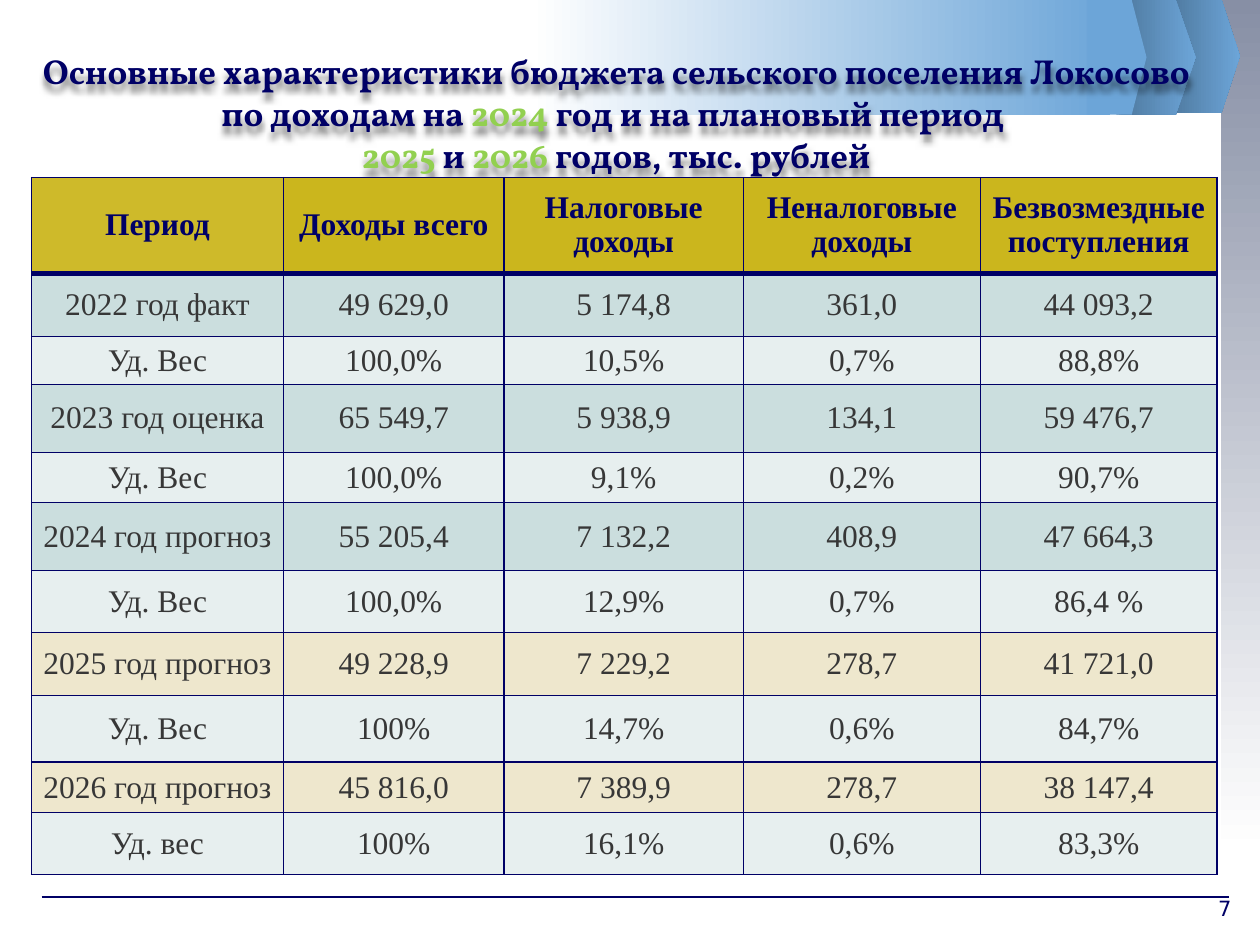
from dataclasses import dataclass

from lxml import etree
from pptx import Presentation
from pptx import util as u
from pptx.dml.color import RGBColor
from pptx.enum import shapes, text
from pptx.oxml import ns

COLUMNS, ROWS = 100, 75


@dataclass(frozen=True)
class Theme:
    navy: str = "000066"
    green: str = "92D050"
    body: str = "373737"
    white: str = "FFFFFF"
    slate: str = "878FA5"
    steel: str = "4D769B"
    sky: str = "6CA5D8"
    gold: str = "CBB61D"
    teal: str = "CBDEDE"
    pale: str = "E7EFEF"
    sand: str = "EEE7CD"
    title_font: str = "Vollkorn"
    table_font: str = "Times New Roman"
    number_font: str = "DejaVu Sans"
    title_size: float = 19.8
    title_leading: float = 24
    table_size: float = 18
    number_size: float = 12


def rgb(code):
    return RGBColor.from_string(code)


def add_xml(parent, tag, **attributes):
    return etree.SubElement(parent, ns.qn(tag), attributes)


class Deck:
    def __init__(self, theme):
        self.theme = theme
        self.presentation = Presentation()
        self.presentation.slide_width = u.Inches(10)
        self.presentation.slide_height = u.Inches(7.5)
        self.column = self.presentation.slide_width / COLUMNS
        self.row = self.presentation.slide_height / ROWS
        self.slide = self.presentation.slides.add_slide(self.presentation.slide_layouts[6])

    def box(self, left, top, width, height):
        """Turn grid columns and rows into slide lengths."""
        return (round(left * self.column), round(top * self.row),
                round(width * self.column), round(height * self.row))

    def style_font(self, font, name, size, color, bold=False):
        font.name, font.size, font.bold = name, u.Pt(size), bold
        font.color.rgb = rgb(color)

    def block(self, area, colors, downward=False, arrow=False):
        """Draw a rectangle or pentagon with one solid colour or a two-colour gradient."""
        preset = shapes.MSO_SHAPE.PENTAGON if arrow else shapes.MSO_SHAPE.RECTANGLE
        shape = self.slide.shapes.add_shape(preset, *self.box(*area))
        shape.shadow.inherit = False
        shape.line.fill.background()
        if arrow:
            shape.adjustments[0] = 0.25
        if len(colors) == 1:
            shape.fill.solid()
            shape.fill.fore_color.rgb = rgb(colors[0])
        else:
            shape.fill.gradient()
            shape.fill.gradient_angle = 270 if downward else 0
            for stop, color, position in zip(shape.fill.gradient_stops, colors, (0, 1)):
                stop.color.rgb = rgb(color)
                stop.position = position

    def rule(self, left, right, y):
        x, top, width, _ = self.box(left, y, right - left, 0)
        line = self.slide.shapes.add_connector(
            shapes.MSO_CONNECTOR.STRAIGHT, x, top, x + width, top)
        line.line.color.rgb = rgb(self.theme.navy)
        line.line.width = u.Pt(0.75)
        add_xml(line._element.spPr, "a:effectLst")

    def title(self, area, lines):
        """Write centred lines of (words, colour) pieces with a soft shadow."""
        title = self.slide.shapes.add_textbox(*self.box(*area))
        frame = title.text_frame
        frame.word_wrap = True
        frame.margin_top = u.Inches(0.09)
        paragraph = frame.paragraphs[0]
        paragraph.alignment = text.PP_ALIGN.CENTER
        paragraph.line_spacing = u.Pt(self.theme.title_leading)
        self.style_font(paragraph.font, self.theme.title_font, self.theme.title_size,
                        self.theme.navy, True)
        for number, pieces in enumerate(lines):
            if number:
                paragraph.add_line_break()
            for words, color in pieces:
                run = paragraph.add_run()
                run.text = words
                self.style_font(run.font, self.theme.title_font, self.theme.title_size, color, True)
        effects = add_xml(title._element.spPr, "a:effectLst")
        shadow = add_xml(effects, "a:outerShdw", blurRad=str(u.Pt(3)), dist=str(u.Pt(4)),
                         dir="5400000", algn="tl", rotWithShape="0")
        add_xml(add_xml(shadow, "a:srgbClr", val="000000"), "a:alpha", val="50000")

    def page_number(self, area, number):
        frame = self.slide.shapes.add_textbox(*self.box(*area)).text_frame
        frame.text = number
        self.style_font(frame.paragraphs[0].font, self.theme.number_font,
                        self.theme.number_size, self.theme.navy)

    def borders(self, cell, top, bottom):
        properties = cell._tc.get_or_add_tcPr()
        for index, (side, points) in enumerate((("L", 1), ("R", 1), ("T", top), ("B", bottom))):
            edge = etree.Element(ns.qn(f"a:ln{side}"), w=str(u.Pt(points)))
            add_xml(add_xml(edge, "a:solidFill"), "a:srgbClr", val=self.theme.navy)
            properties.insert(index, edge)

    def table(self, left, top, widths, heights, records, fills):
        area = self.box(left, top, sum(widths), sum(heights))
        table = self.slide.shapes.add_table(len(records), len(widths), *area).table
        for column, width in zip(table.columns, widths):
            column.width = round(width * self.column)
        for r, (record, height, fill) in enumerate(zip(records, heights, fills)):
            table.rows[r].height = round(height * self.row)
            for c, words in enumerate(record):
                self.cell(table.cell(r, c), words, fill, r)
        header_color = table.cell(0, 0)._tc.tcPr.find(".//" + ns.qn("a:srgbClr") + "[@val='CBB61D']")
        add_xml(header_color, "a:alpha", val="94000")

    def cell(self, cell, words, fill, row):
        header = row == 0
        cell.text = words
        cell.vertical_anchor = text.MSO_ANCHOR.MIDDLE
        cell.margin_left = cell.margin_right = u.Inches(0.07)
        cell.margin_top = cell.margin_bottom = 0
        cell.fill.solid()
        cell.fill.fore_color.rgb = rgb(fill)
        self.borders(cell, 3 if row == 1 else 1, 3 if header else 1)
        paragraph = cell.text_frame.paragraphs[0]
        paragraph.alignment = text.PP_ALIGN.CENTER
        if header:
            paragraph.line_spacing = 0.95
        self.style_font(paragraph.font, self.theme.table_font, self.theme.table_size,
                        self.theme.navy if header else self.theme.body, header)


BUDGET = [
    ("Период", "Доходы всего", "Налоговые доходы", "Неналоговые доходы",
     "Безвозмездные поступления"),
    ("2022 год факт", "49 629,0", "5 174,8", "361,0", "44 093,2"),
    ("Уд. Вес", "100,0%", "10,5%", "0,7%", "88,8%"),
    ("2023 год оценка", "65 549,7", "5 938,9", "134,1", "59 476,7"),
    ("Уд. Вес", "100,0%", "9,1%", "0,2%", "90,7%"),
    ("2024 год прогноз", "55 205,4", "7 132,2", "408,9", "47 664,3"),
    ("Уд. Вес", "100,0%", "12,9%", "0,7%", "86,4 %"),
    ("2025 год прогноз", "49 228,9", "7 229,2", "278,7", "41 721,0"),
    ("Уд. Вес", "100%", "14,7%", "0,6%", "84,7%"),
    ("2026 год прогноз", "45 816,0", "7 389,9", "278,7", "38 147,4"),
    ("Уд. вес", "100%", "16,1%", "0,6%", "83,3%"),
]


def main():
    theme = Theme()
    deck = Deck(theme)
    deck.block((96.9, 0, 3.1, 67.7), (theme.slate, theme.white), downward=True)
    deck.rule(3.3, 97.5, 71.2)
    for area in ((92.5, -0.1, 5.9, 9.1), (88.6, 0, 6.3, 9.1)):
        deck.block(area, (theme.steel, theme.sky), arrow=True)
    deck.block((42.1, 0, 46, 9.1), (theme.white, theme.sky))
    deck.block((86.3, 0, 4.7, 9.1), (theme.sky,), arrow=True)

    deck.title((1.7, 3, 94.4, 12.5), [
        [("Основные характеристики бюджета сельского поселения Локосово по доходам на ", theme.navy),
         ("2024 ", theme.green), ("год и на плановый период ", theme.navy)],
        [("2025", theme.green), (" и ", theme.navy), ("2026", theme.green),
         (" годов, тыс. рублей", theme.navy)],
    ])
    year_fills = [theme.teal] * 3 + [theme.sand] * 2
    fills = [theme.gold] + [fill for year in year_fills for fill in (year, theme.pale)]
    deck.table(2.5, 14.1, (20, 17.5, 19, 18.8, 18.8),
               (7.6, 5, 3.8, 5.4, 4, 5.4, 4.9, 5, 5.3, 4, 4.9), BUDGET, fills)
    deck.page_number((95.7, 70.6, 3.2, 2.9), "7")
    deck.presentation.save("out.pptx")


if __name__ == "__main__":
    main()
